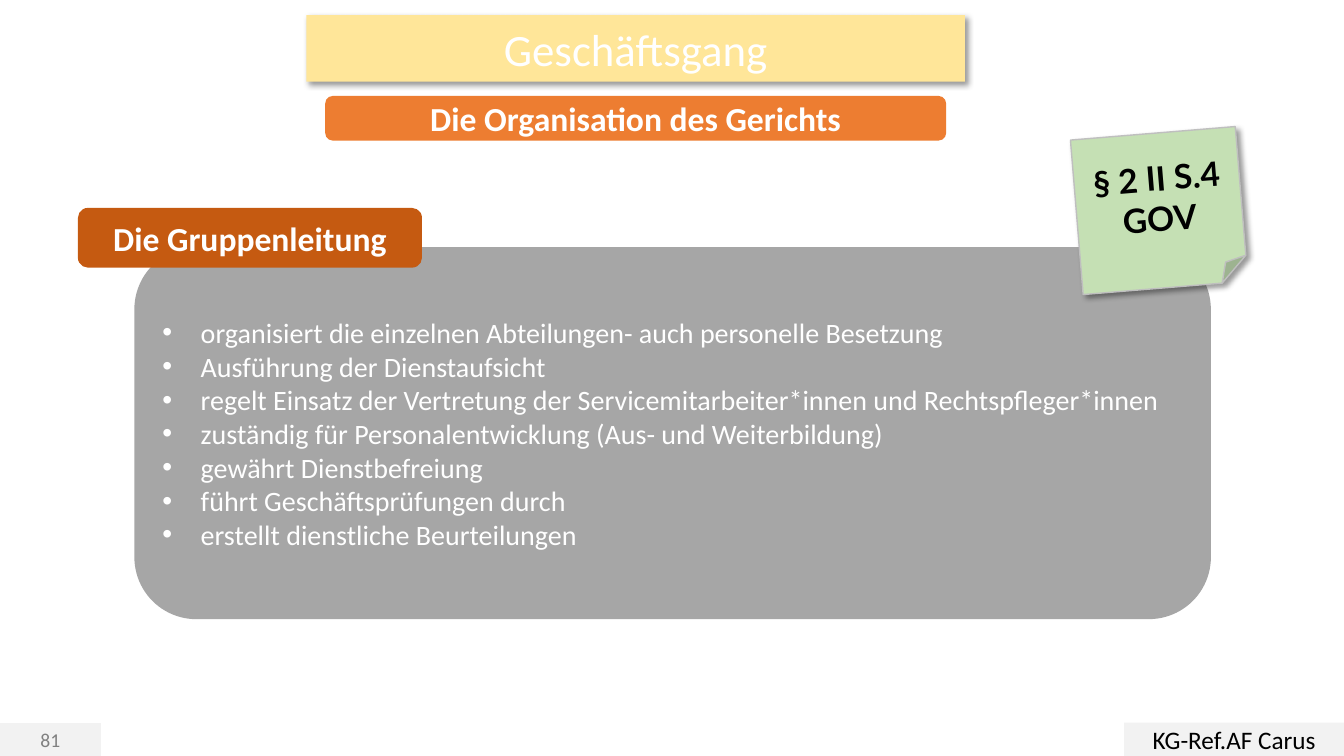
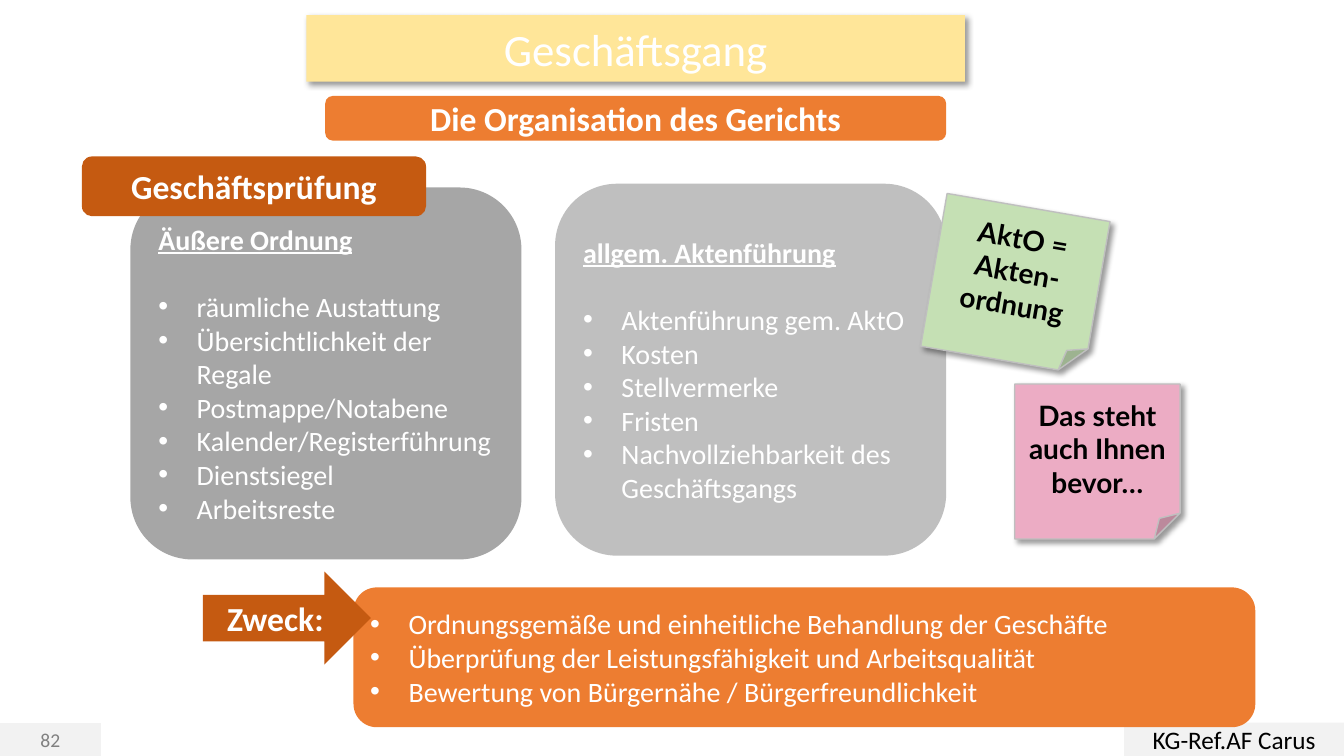
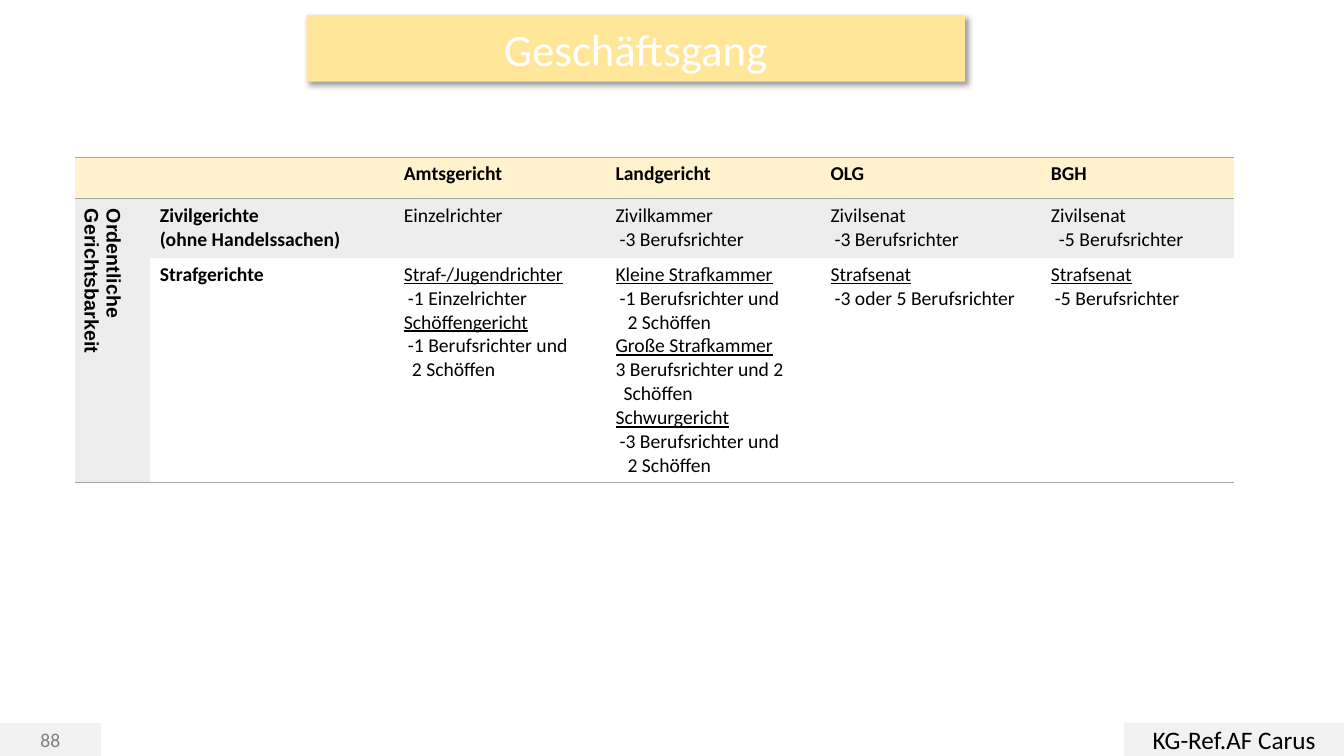
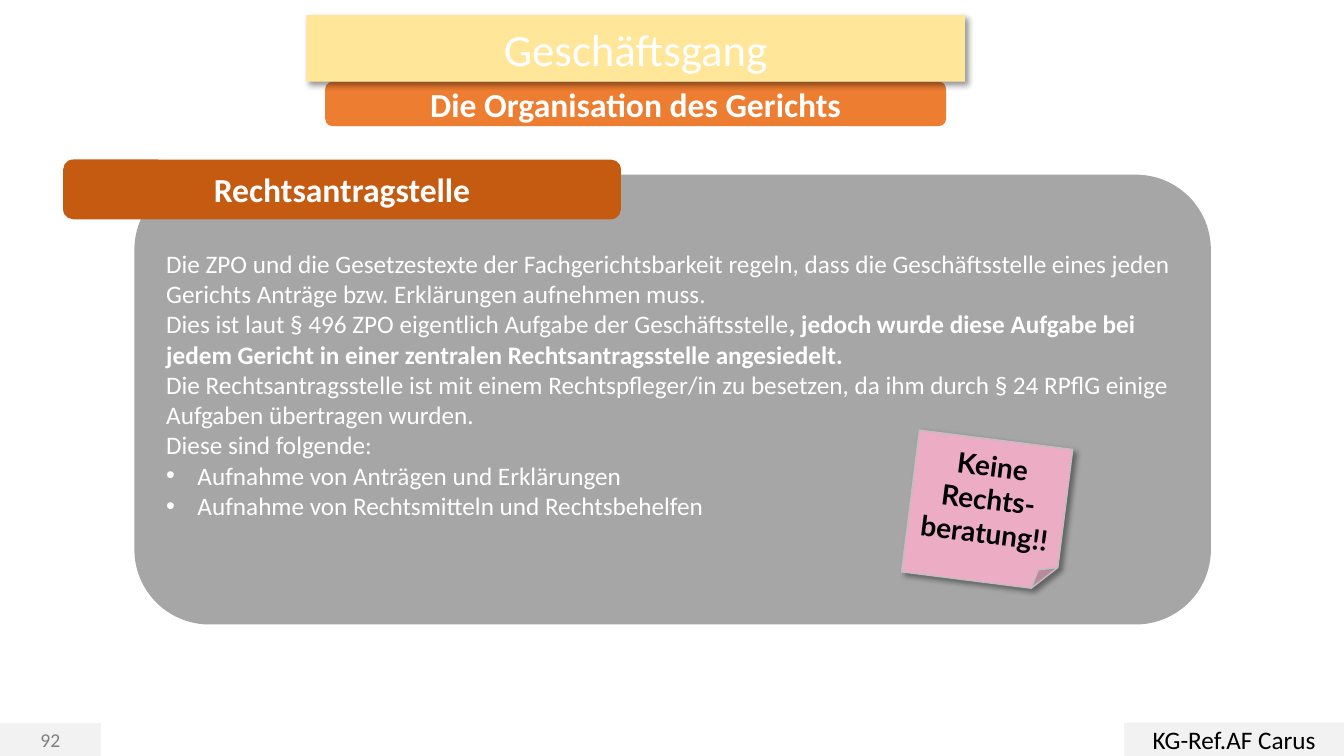
from lxml import etree
from pptx import Presentation
from pptx.dml.color import RGBColor
from pptx.enum.shapes import MSO_SHAPE as SHAPE
from pptx.enum.text import MSO_ANCHOR as ANCHOR, PP_ALIGN as ALIGN
from pptx.oxml.ns import qn
from pptx.util import Emu, Inches, Pt

SLIDE_WIDTH, SLIDE_HEIGHT = Inches(13.33), Inches(7.5)
TITLE_ONLY = 5
NO_TABLE_STYLE = "{2D5ABB26-0587-4C30-8999-92F81FD0307C}"
COLORS = {
    "white": "FFFFFF", "black": "000000", "number": "808080",
    "footer": "F2F2F2", "title": "FFE699", "band": "ED7D31",
    "label": "C55A11", "panel": "A6A6A6", "light_panel": "BFBFBF",
    "green_note": "C5E0B4", "pink_note": "ECACC4", "note_line": "BFBFBF",
    "table_head": "FFF2CC", "table_band": "EDEDED", "table_line": "A5A5A5",
}
# All positions and sizes are percentages of the slide's width and height.
LABEL_WIDTH, LABEL_HEIGHT = 25.6, 7.9
PANEL_LEFT, PANEL_WIDTH, PANEL_HEIGHT = 10, 80.1, 49.2
HALF_WIDTH = 29.1
NOTE_SIZE = (12.3, 20.5)
TABLE_COLUMNS = (5.55, 18.15, 15.75, 16, 16.4, 14.4)
TABLE_ROWS = (5.5, 7.8, 29.6)


def across(share):
    return Emu(round(SLIDE_WIDTH * share / 100))


def down(share):
    return Emu(round(SLIDE_HEIGHT * share / 100))


def color(name):
    return RGBColor.from_string(COLORS[name])


def add_element(parent, tag, **attributes):
    return etree.SubElement(parent, qn(tag), **attributes)


def write_run(paragraph, text, size, font, ink, bold, underline):
    run = paragraph.add_run()
    run.text = text
    run.font.size, run.font.name = Pt(size), font
    run.font.bold, run.font.underline = bold, underline
    run.font.color.rgb = color(ink)


def write_paragraph(paragraph, text, size=20, font="Calibri", ink="white",
                    bold=False, underline=False, align=ALIGN.LEFT,
                    bullet=0, indent=0, after=0, bold_tail=""):
    """Bullet and indent are in inches, after is in points."""
    paragraph.alignment = align
    paragraph.space_before, paragraph.space_after = Pt(0), Pt(after)
    write_run(paragraph, text, size, font, ink, bold, underline)
    if bold_tail:
        write_run(paragraph, bold_tail, size, font, ink, True, underline)
    properties = paragraph._p.get_or_add_pPr()
    if bullet or indent:
        properties.set("marL", str(Inches(bullet or indent)))
        properties.set("indent", str(-Inches(bullet)))
    if bullet:
        add_element(properties, "a:buFont", typeface="Arial")
        add_element(properties, "a:buChar", char="•")


def write_text(frame, lines, **style):
    """Each line is a string, or a dict with its text and own format."""
    for index, line in enumerate(lines):
        paragraph = frame.add_paragraph() if index else frame.paragraphs[0]
        own = line if isinstance(line, dict) else {"text": line}
        write_paragraph(paragraph, **{**style, **own})


def add_shadow(shape):
    properties = shape._element.spPr
    for old in properties.findall(qn("a:effectLst")):
        properties.remove(old)
    effects = add_element(properties, "a:effectLst")
    shadow = add_element(effects, "a:outerShdw", blurRad=str(Pt(4)), dist=str(Pt(3)),
                         dir="2700000", algn="tl", rotWithShape="0")
    tone = add_element(shadow, "a:srgbClr", val=COLORS["black"])
    add_element(tone, "a:alpha", val="40000")


def place(shape, left, top, width, height):
    shape.left, shape.top = across(left), down(top)
    shape.width, shape.height = across(width), down(height)


def add_box(slide, area, fill, lines, kind=SHAPE.ROUNDED_RECTANGLE, line=None, **style):
    shape = slide.shapes.add_shape(kind, 0, 0, 0, 0)
    place(shape, *area)
    shape.shadow.inherit = False
    shape.fill.solid()
    shape.fill.fore_color.rgb = color(fill)
    if line:
        shape.line.color.rgb, shape.line.width = color(line), Pt(1)
    else:
        shape.line.fill.background()
    shape.text_frame.word_wrap = True
    shape.text_frame.vertical_anchor = ANCHOR.MIDDLE
    write_text(shape.text_frame, lines, **style)
    return shape


def add_label(slide, left, top, text, width=LABEL_WIDTH, height=LABEL_HEIGHT,
              fill="label", kind=SHAPE.ROUNDED_RECTANGLE):
    add_box(slide, (left, top, width, height), fill, [text], kind,
            size=24, bold=True, align=ALIGN.CENTER)


def add_note(slide, left, top, fill, lines, rotation=0, size=20, extent=NOTE_SIZE):
    note = add_box(slide, (left, top, *extent), fill, lines, SHAPE.FOLDED_CORNER,
                   "note_line", size=size, font="Lato", ink="black", bold=True,
                   align=ALIGN.CENTER)
    note.rotation = rotation
    add_shadow(note)


def add_title(slide, text):
    title = slide.shapes.title
    place(title, 22.8, 2, 49, 8.8)
    geometry = add_element(title._element.spPr, "a:prstGeom", prst="roundRect")
    add_element(geometry, "a:avLst")
    title.fill.solid()
    title.fill.fore_color.rgb = color("title")
    add_shadow(title)
    title.text_frame.vertical_anchor = ANCHOR.MIDDLE
    write_text(title.text_frame, [text], size=32, align=ALIGN.CENTER)
    slide.shapes._spTree.append(title._element)  # in front of the band


def start_slide(presentation, number, band_top=None):
    """Add a slide with its footer, title and, if band_top is given, the band."""
    slide = presentation.slides.add_slide(presentation.slide_layouts[TITLE_ONLY])
    add_box(slide, (0, 95.7, 7.5, 4.3), "footer", [str(number)], SHAPE.RECTANGLE,
            "footer", size=14, ink="number", align=ALIGN.CENTER)
    add_box(slide, (83.65, 95.6, 16.35, 4.4), "footer", ["KG-Ref.AF Carus"],
            SHAPE.RECTANGLE, size=18, ink="black", align=ALIGN.CENTER)
    if band_top is not None:
        add_label(slide, 24.2, band_top, "Die Organisation des Gerichts", 46.2, 5.9, "band")
    add_title(slide, "Geschäftsgang")
    return slide


def underlined(text, **style):
    return dict(text=text, underline=True, **style)


def indented(text, steps=1):
    return dict(text=text, indent=0.04 * steps)


def add_border(cell, *sides):
    properties = cell._tc.get_or_add_tcPr()
    for index, side in enumerate(sides):
        line = etree.Element(qn(f"a:{side}"), w=str(Pt(1)))
        fill = add_element(line, "a:solidFill")
        add_element(fill, "a:srgbClr", val=COLORS["table_line"])
        properties.insert(index, line)


def fill_cell(cell, lines, fill=None, **style):
    if fill:
        cell.fill.solid()
        cell.fill.fore_color.rgb = color(fill)
    else:
        cell.fill.background()
    if lines:
        write_text(cell.text_frame, lines, **{"size": 14, "ink": "black", **style})


def add_court_table(slide, left, top, rows):
    frame = slide.shapes.add_table(len(TABLE_ROWS), len(TABLE_COLUMNS), across(left), down(top),
                                   across(sum(TABLE_COLUMNS)), down(sum(TABLE_ROWS)))
    table = frame.table
    table._tbl.tblPr.find(qn("a:tableStyleId")).text = NO_TABLE_STYLE
    table.first_row = table.horz_banding = False
    for column, width in zip(table.columns, TABLE_COLUMNS):
        column.width = across(width)
    for row, height in zip(table.rows, TABLE_ROWS):
        row.height = down(height)
    table.cell(1, 0).merge(table.cell(2, 0))
    fills = ("table_head", "table_band", None)
    borders = (("lnT", "lnB"), (), ("lnB",))
    for row, texts in enumerate(rows):
        for column, lines in enumerate(texts):
            cell = table.cell(row, column)
            fill_cell(cell, lines, fills[row], bold=row == 0 or column < 2,
                      font="Calibri" if column else "Arial")
            add_border(cell, *borders[row])
    side = table.cell(1, 0)
    side._tc.get_or_add_tcPr().set("vert", "vert")
    add_border(side, "lnB")


def build_group_lead(presentation):
    slide = start_slide(presentation, 81, 12.7)
    add_box(slide, (PANEL_LEFT, 32.7, PANEL_WIDTH, PANEL_HEIGHT), "panel", [
        "organisiert die einzelnen Abteilungen- auch personelle Besetzung",
        "Ausführung der Dienstaufsicht",
        "regelt Einsatz der Vertretung der Servicemitarbeiter*innen und Rechtspfleger*innen",
        "zuständig für Personalentwicklung (Aus- und Weiterbildung)",
        "gewährt Dienstbefreiung",
        "führt Geschäftsprüfungen durch",
        "erstellt dienstliche Beurteilungen",
    ], bullet=0.38)
    add_label(slide, 5.8, 27.5, "Die Gruppenleitung")
    add_note(slide, 80.1, 17.6, "green_note", ["§ 2 II S.4 GOV"], -4.7, size=24)


def build_audit(presentation):
    slide = start_slide(presentation, 82, 12.7)
    panels = (
        (9.7, 24.8, "panel", "Äußere Ordnung", [
            "räumliche Austattung", "Übersichtlichkeit der Regale", "Postmappe/Notabene",
            "Kalender/Registerführung", "Dienstsiegel", "Arbeitsreste"]),
        (41.3, 24.3, "light_panel", "allgem. Aktenführung", [
            "Aktenführung gem. AktO", "Kosten", "Stellvermerke", "Fristen",
            "Nachvollziehbarkeit des Geschäftsgangs"]),
    )
    for left, top, fill, heading, points in panels:
        heading_line = underlined(heading, bold=True, bullet=0, after=24)
        add_box(slide, (left, top, HALF_WIDTH, PANEL_HEIGHT), fill,
                [heading_line, *points], bullet=0.38)
    add_label(slide, 6.1, 20.7, "Geschäftsprüfung")
    add_note(slide, 75.5, 50.8, "pink_note", ["Das steht auch Ihnen bevor…"])
    add_note(slide, 69.4, 27.3, "green_note", ["AktO =", "Akten-ordnung"], 9.8)
    add_box(slide, (26.3, 77.7, 67.1, 18.5), "band", [
        "Ordnungsgemäße und einheitliche Behandlung der Geschäfte",
        "Überprüfung der Leistungsfähigkeit und Arbeitsqualität",
        "Bewertung von Bürgernähe / Bürgerfreundlichkeit",
    ], bullet=0.38)
    add_label(slide, 15.1, 75.6, "Zweck:", 12.5, 12.3, kind=SHAPE.RIGHT_ARROW)


def build_courts(presentation):
    slide = start_slide(presentation, 88)
    three_judges = indented("-3 Berufsrichter")
    one_judge_and = indented("-1 Berufsrichter und")
    add_court_table(slide, 5.6, 20.8, [
        [[], [], ["Amtsgericht"], ["Landgericht"], ["OLG"], ["BGH"]],
        [["Ordentliche", "Gerichtsbarkeit"],
         ["Zivilgerichte", "(ohne Handelssachen)"],
         ["Einzelrichter"],
         ["Zivilkammer", three_judges],
         ["Zivilsenat", three_judges],
         ["Zivilsenat", indented("-5 Berufsrichter", 2)]],
        [[],
         ["Strafgerichte"],
         [underlined("Straf-/Jugendrichter"), indented("-1 Einzelrichter"),
          underlined("Schöffengericht"), one_judge_and, indented("2 Schöffen", 2)],
         [underlined("Kleine Strafkammer"), one_judge_and, indented("2 Schöffen", 3),
          underlined("Große Strafkammer"), "3 Berufsrichter und 2", indented("Schöffen", 2),
          underlined("Schwurgericht"), indented("-3 Berufsrichter und"),
          indented("2 Schöffen", 3)],
         [underlined("Strafsenat"), indented("-3 oder 5 Berufsrichter")],
         [underlined("Strafsenat"), indented("-5 Berufsrichter")]],
    ])


def build_application_office(presentation):
    slide = start_slide(presentation, 92, 10.8)
    panel = add_box(slide, (PANEL_LEFT, 23.1, PANEL_WIDTH, 59.5), "panel", [
        "Die ZPO und die Gesetzestexte der Fachgerichtsbarkeit regeln, dass die "
        "Geschäftsstelle eines jeden Gerichts Anträge bzw. Erklärungen aufnehmen muss.",
        dict(text="Dies ist laut § 496 ZPO eigentlich Aufgabe der Geschäftsstelle",
             bold_tail=", jedoch wurde diese Aufgabe bei jedem Gericht in einer "
                       "zentralen Rechtsantragsstelle angesiedelt."),
        "Die Rechtsantragsstelle ist mit einem Rechtspfleger/in zu besetzen, da ihm "
        "durch § 24 RPflG einige Aufgaben übertragen wurden.",
        "Diese sind folgende:",
        dict(text="Aufnahme von Anträgen und Erklärungen", bullet=0.31),
        dict(text="Aufnahme von Rechtsmitteln und Rechtsbehelfen", bullet=0.31),
    ], size=18)
    panel.text_frame.margin_bottom = Inches(0.35)
    add_label(slide, 4.7, 21.1, "Rechtsantragstelle", 41.5)
    add_note(slide, 67.7, 58.1, "pink_note", ["Keine Rechts-beratung!!"], 7.2,
             extent=(11.5, 18.9))


def main():
    presentation = Presentation()
    presentation.slide_width, presentation.slide_height = SLIDE_WIDTH, SLIDE_HEIGHT
    for build in (build_group_lead, build_audit, build_courts, build_application_office):
        build(presentation)
    presentation.save("out.pptx")


if __name__ == "__main__":
    main()
